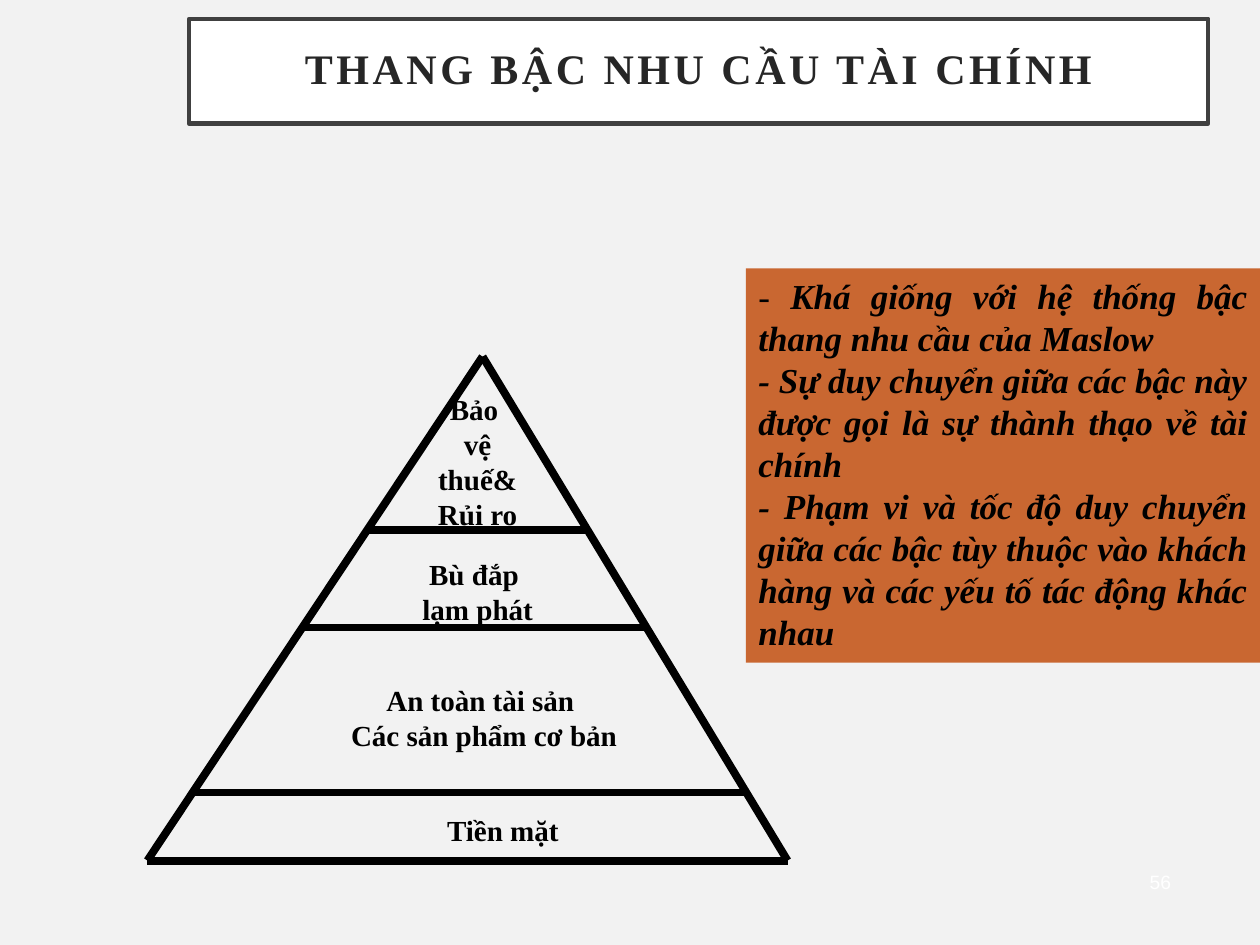
"""Build the slide on the ladder of financial needs."""
import pptx
import pptx.dml.color
import pptx.enum.shapes
import pptx.enum.text
import pptx.util
import lxml.etree

Inches, Pt = pptx.util.Inches, pptx.util.Pt
Align, Anchor = pptx.enum.text.PP_ALIGN, pptx.enum.text.MSO_ANCHOR
Shape = pptx.enum.shapes.MSO_SHAPE

TITLE = "THANG BẬC NHU CẦU TÀI CHÍNH"
NOTES = [
    [("- ", False), ("Khá giống với hệ thống bậc thang nhu cầu của Maslow", True)],
    [("- Sự duy chuyển giữa các bậc này được gọi là sự thành thạo về tài chính", True)],
    [("- Phạm vi và tốc độ duy chuyển giữa các bậc tùy thuộc vào khách hàng "
      "và các yếu tố tác động khác nhau", True)],
]
LEVELS = [
    (["Tiền mặt"], (3.08, 6.4, 1.82, 0.38), True),
    (["An toàn tài sản ", "Các sản phẩm cơ bản"], (2.67, 5.37, 2.34, 0.66), False),
    (["Bù đắp ", "lạm phát"], (2.83, 4.37, 1.92, 0.66), True),
    (["Bảo ", "vệ thuế&", "Rủi ro"], (3.25, 3.06, 1.08, 1.22), True),
]
PAGE_NUMBER = "56"
APEX, BASE_LEFT, BASE_RIGHT = (3.83, 2.83), (1.17, 6.83), (6.25, 6.83)
LEVEL_TOPS = [6.29, 4.98, 4.21]


def color(value):
    return pptx.dml.color.RGBColor.from_string(value)


def fill(target, value):
    target.fill.solid()
    target.fill.fore_color.rgb = color(value)


def style(run, size, value, bold=False, italic=False, name="Times New Roman"):
    font = run.font
    font.name, font.size, font.bold, font.italic = name, Pt(size), bold, italic
    font.color.rgb = color(value)


def edge_point(corner, height):
    share = (height - APEX[1]) / (corner[1] - APEX[1])
    return APEX[0] + share * (corner[0] - APEX[0]), height


def add_line(slide, start, end):
    line = slide.shapes.add_connector(
        pptx.enum.shapes.MSO_CONNECTOR.STRAIGHT, *map(Inches, start + end))
    line.line.color.rgb = color("000000")
    line.line.width = Pt(4.5)
    lxml.etree.SubElement(line.line._get_or_add_ln().getparent(),
                          pptx.oxml.ns.qn("a:effectLst"))


def add_plain_shape(slide, kind, box):
    shape = slide.shapes.add_shape(kind, *map(Inches, box))
    shape.shadow.inherit = False
    shape.line.fill.background()
    return shape


def add_title(slide):
    title = slide.shapes.title
    title.left, title.top, title.width, title.height = map(Inches, (1.5, 0.15, 8.09, 0.83))
    fill(title, "FFFFFF")
    title.line.color.rgb = color("404040")
    title.line.width = Pt(2.5)
    frame = title.text_frame
    frame.text = TITLE
    frame.vertical_anchor = Anchor.MIDDLE
    frame.margin_left = frame.margin_right = Inches(0.2)
    frame.margin_top = frame.margin_bottom = Inches(0.2)
    paragraph = frame.paragraphs[0]
    paragraph.alignment, paragraph.line_spacing = Align.CENTER, 0.9
    style(paragraph.runs[0], 24, "262626", bold=True)
    paragraph.runs[0].font._element.set("spc", "200")


def add_pyramid(slide):
    add_line(slide, APEX, BASE_LEFT)
    add_line(slide, APEX, BASE_RIGHT)
    add_line(slide, BASE_RIGHT, BASE_LEFT)
    for height in LEVEL_TOPS:
        add_line(slide, edge_point(BASE_LEFT, height), edge_point(BASE_RIGHT, height))
    for lines, box, wrap in LEVELS:
        frame = slide.shapes.add_textbox(*map(Inches, box)).text_frame
        frame.text = "\n".join(lines)
        frame.word_wrap = wrap
        frame.auto_size = pptx.enum.text.MSO_AUTO_SIZE.SHAPE_TO_FIT_TEXT
        for paragraph in frame.paragraphs:
            paragraph.alignment = Align.CENTER
            style(paragraph.runs[0], 16.6, "000000", bold=True)


def add_notes_panel(slide):
    panel = add_plain_shape(slide, Shape.RECTANGLE, (5.92, 2.13, 4.08, 3.13))
    fill(panel, "C96731")
    frame = panel.text_frame
    frame.word_wrap = True
    frame.vertical_anchor = Anchor.TOP
    frame.auto_size = pptx.enum.text.MSO_AUTO_SIZE.SHAPE_TO_FIT_TEXT
    for index, parts in enumerate(NOTES):
        paragraph = frame.add_paragraph() if index else frame.paragraphs[0]
        paragraph.alignment = Align.JUSTIFY
        for text, strong in parts:
            run = paragraph.add_run()
            run.text = text
            style(run, 20, "000000", bold=strong, italic=strong)


def add_page_number(slide):
    badge = add_plain_shape(slide, Shape.OVAL, (9.01, 6.8, 0.4, 0.4))
    badge.fill.background()
    frame = badge.text_frame
    frame.text = PAGE_NUMBER
    frame.word_wrap = False
    frame.vertical_anchor = Anchor.MIDDLE
    frame.margin_left = frame.margin_right = 0
    frame.paragraphs[0].alignment = Align.CENTER
    style(frame.paragraphs[0].runs[0], 11, "FFFFFF", name="Arial")


def main():
    presentation = pptx.Presentation()
    presentation.slide_width, presentation.slide_height = Inches(10), Inches(7.5)
    slide = presentation.slides.add_slide(presentation.slide_layouts[5])
    fill(slide.background, "F2F2F2")
    add_page_number(slide)
    add_title(slide)
    add_pyramid(slide)
    add_notes_panel(slide)
    presentation.save("out.pptx")


if __name__ == "__main__":
    main()
